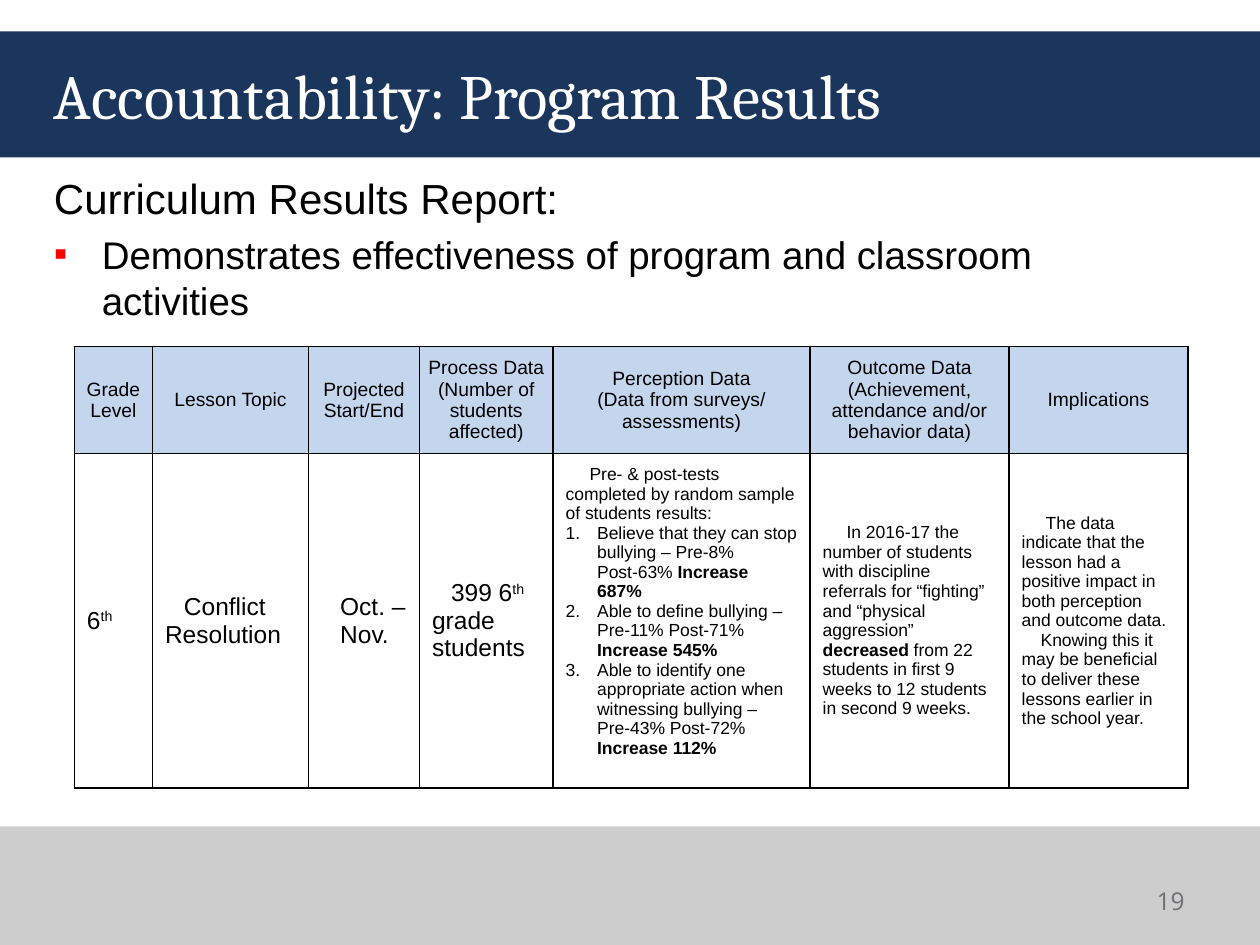
import pptx
import pptx.util
import pptx.dml.color
import pptx.enum.shapes
import pptx.enum.text
from lxml import etree
from pptx.util import Inches

COLORS = {"navy": "1B365D", "gray": "CDCDCD", "white": "FFFFFF", "black": "000000",
          "red": "FF0000", "header": "C4D5EE", "number": "6E7073"}
ALIGN = pptx.enum.text.PP_ALIGN
MIDDLE = pptx.enum.text.MSO_ANCHOR.MIDDLE
NAMESPACE = "http://schemas.openxmlformats.org/drawingml/2006/main"

# Content: a paragraph is a string or a list of (text, style) runs
TITLE = "Accountability: Program Results"
REPORT = "Curriculum Results Report:"
PURPOSE = "Demonstrates effectiveness of program and classroom activities"
PAGE_NUMBER = "19"
BANDS = [(0.25, 1, "navy"), (6.56, 0.94, "gray")]

COLUMN_WIDTHS = [0.62, 1.24, 0.88, 1.06, 2.04, 1.58, 1.42]
ROW_HEIGHTS = [0.85, 2.48]
HEADERS = [
    ["Grade Level"],
    ["Lesson Topic"],
    ["Projected Start/End"],
    ["Process Data (Number of students affected)"],
    ["Perception Data", "(Data from surveys/ assessments)"],
    ["Outcome Data (Achievement, attendance and/or behavior data)"],
    ["Implications"],
]
FIRST_LINE = {"size": 14, "indent": 0.15}
DETAIL = {"size": 10, "indent": 0.19}
NUMBERED = {"size": 10, "margin": 0.25, "indent": -0.25, "numbered": True}
RESULTS = [  # cells of (paragraph, format)
    [([("6", ""), ("th", "super")], {"size": 14})],
    [("Conflict Resolution", FIRST_LINE)],
    [("Oct. –", FIRST_LINE), ("Nov.", FIRST_LINE)],
    [([("399 6", ""), ("th", "super"), (" grade students", "")], FIRST_LINE)],
    [("Pre- & post-tests completed by random sample of students results:", DETAIL),
     ([("Believe that they can stop bullying – Pre-8% Post-63% ", ""),
       ("Increase 687%", "bold")], NUMBERED),
     ([("Able to define bullying – Pre-11% Post-71% ", ""),
       ("Increase 545%", "bold")], NUMBERED),
     ([("Able to identify one appropriate action when witnessing bullying – "
        "Pre-43% Post-72% ", ""), ("Increase 112%", "bold")], NUMBERED)],
    [([("In 2016-17 the number of students with discipline referrals for “fighting” "
        "and “physical aggression” ", ""), ("decreased", "bold"),
       (" from 22 students in first 9 weeks to 12 students in second 9 weeks.", "")],
      DETAIL)],
    [("The data indicate that the lesson had a positive impact in both perception "
      "and outcome data.", DETAIL),
     ("Knowing this it may be beneficial to deliver these lessons earlier in the "
      "school year.", {"size": 10, "indent": 0.15})],
]
PERCEPTION_COLUMN = 4


def rgb(name):
    return pptx.dml.color.RGBColor.from_string(COLORS[name])


def add_element(parent, tag, **attributes):
    element = etree.SubElement(parent, f"{{{NAMESPACE}}}{tag}")
    for key, value in attributes.items():
        element.set(key, str(value))
    return element


def write(frame, text, size=11, font="Arial", color="black", align=ALIGN.LEFT,
          before=0, margin=0, indent=0, bullet=None, numbered=False):
    """Fill the first empty paragraph of the frame, or append one."""
    first = frame.paragraphs[0]
    paragraph = first if not first.runs else frame.add_paragraph()
    paragraph.alignment = align
    paragraph.space_before = pptx.util.Pt(before)
    properties = paragraph._p.get_or_add_pPr()
    properties.set("marL", str(Inches(margin)))
    properties.set("indent", str(Inches(indent)))
    if bullet:
        bullet_color = add_element(properties, "buClr")
        add_element(bullet_color, "srgbClr", val=COLORS["red"])
        add_element(properties, "buFont", typeface="Arial")
        add_element(properties, "buChar", char=bullet)
    elif numbered:
        add_element(properties, "buFont", typeface="Arial")
        add_element(properties, "buAutoNum", type="arabicPeriod")
    else:
        add_element(properties, "buNone")
    for content, style in [(text, "")] if isinstance(text, str) else text:
        run = paragraph.add_run()
        run.text = content
        run.font.size = pptx.util.Pt(size)
        run.font.name = font
        run.font.color.rgb = rgb(color)
        run.font.bold = style == "bold"
        if style == "super":
            run._r.get_or_add_rPr().set("baseline", "30000")


def add_text_frame(slide, left, top, width, height, anchor=MIDDLE):
    box = slide.shapes.add_textbox(*map(Inches, (left, top, width, height)))
    box.text_frame.word_wrap = True
    box.text_frame.vertical_anchor = anchor
    return box.text_frame


def format_cell(cell, side_margin, fill=None):
    cell.vertical_anchor = MIDDLE
    cell.margin_left = cell.margin_right = Inches(side_margin)
    cell.margin_top = cell.margin_bottom = 0
    properties = cell._tc.get_or_add_tcPr()
    for side in ("lnL", "lnR", "lnT", "lnB"):
        line = add_element(properties, side, w=pptx.util.Pt(1))
        add_element(add_element(line, "solidFill"), "srgbClr", val=COLORS["black"])
    if fill:
        cell.fill.solid()
        cell.fill.fore_color.rgb = rgb(fill)
    else:
        cell.fill.background()


def add_results_table(slide):
    frame = slide.shapes.add_table(
        len(ROW_HEIGHTS), len(COLUMN_WIDTHS), Inches(0.59), Inches(2.75),
        Inches(sum(COLUMN_WIDTHS)), Inches(sum(ROW_HEIGHTS)))
    table = frame.table
    table.first_row = table.horz_banding = False
    for column, width in zip(table.columns, COLUMN_WIDTHS):
        column.width = Inches(width)
    for row, height in zip(table.rows, ROW_HEIGHTS):
        row.height = Inches(height)
    for index, (header, result) in enumerate(zip(HEADERS, RESULTS)):
        header_cell, result_cell = table.cell(0, index), table.cell(1, index)
        format_cell(header_cell, 0.07, "header")
        format_cell(result_cell, 0.1)
        for text in header:
            write(header_cell.text_frame, text, align=ALIGN.CENTER)
        for text, style in result:
            write(result_cell.text_frame, text, **style)
    table.cell(1, PERCEPTION_COLUMN).margin_bottom = Inches(0.15)


def main():
    presentation = pptx.Presentation()
    presentation.slide_width, presentation.slide_height = Inches(10), Inches(7.5)
    slide = presentation.slides.add_slide(presentation.slide_layouts[6])

    # Title and footer bands
    for top, height, color in BANDS:
        band = slide.shapes.add_shape(
            pptx.enum.shapes.MSO_SHAPE.RECTANGLE, 0, Inches(top), Inches(10), Inches(height))
        band.shadow.inherit = False
        band.fill.solid()
        band.fill.fore_color.rgb = rgb(color)
        band.line.fill.background()

    # Body, title and page number
    body = add_text_frame(slide, 0.33, 1.32, 9.17, 5.34, pptx.enum.text.MSO_ANCHOR.TOP)
    write(body, REPORT, size=24)
    write(body, PURPOSE, size=22, before=4.4, margin=0.38, indent=-0.38, bullet="▪")
    title = add_text_frame(slide, 0.33, 0.25, 9.08, 1)
    write(title, TITLE, size=36, font="Cambria", color="white")
    number = add_text_frame(slide, 9, 6.95, 0.5, 0.4)
    write(number, PAGE_NUMBER, size=14, font="Open Sans", color="number", align=ALIGN.RIGHT)

    add_results_table(slide)
    presentation.save("out.pptx")


if __name__ == "__main__":
    main()
